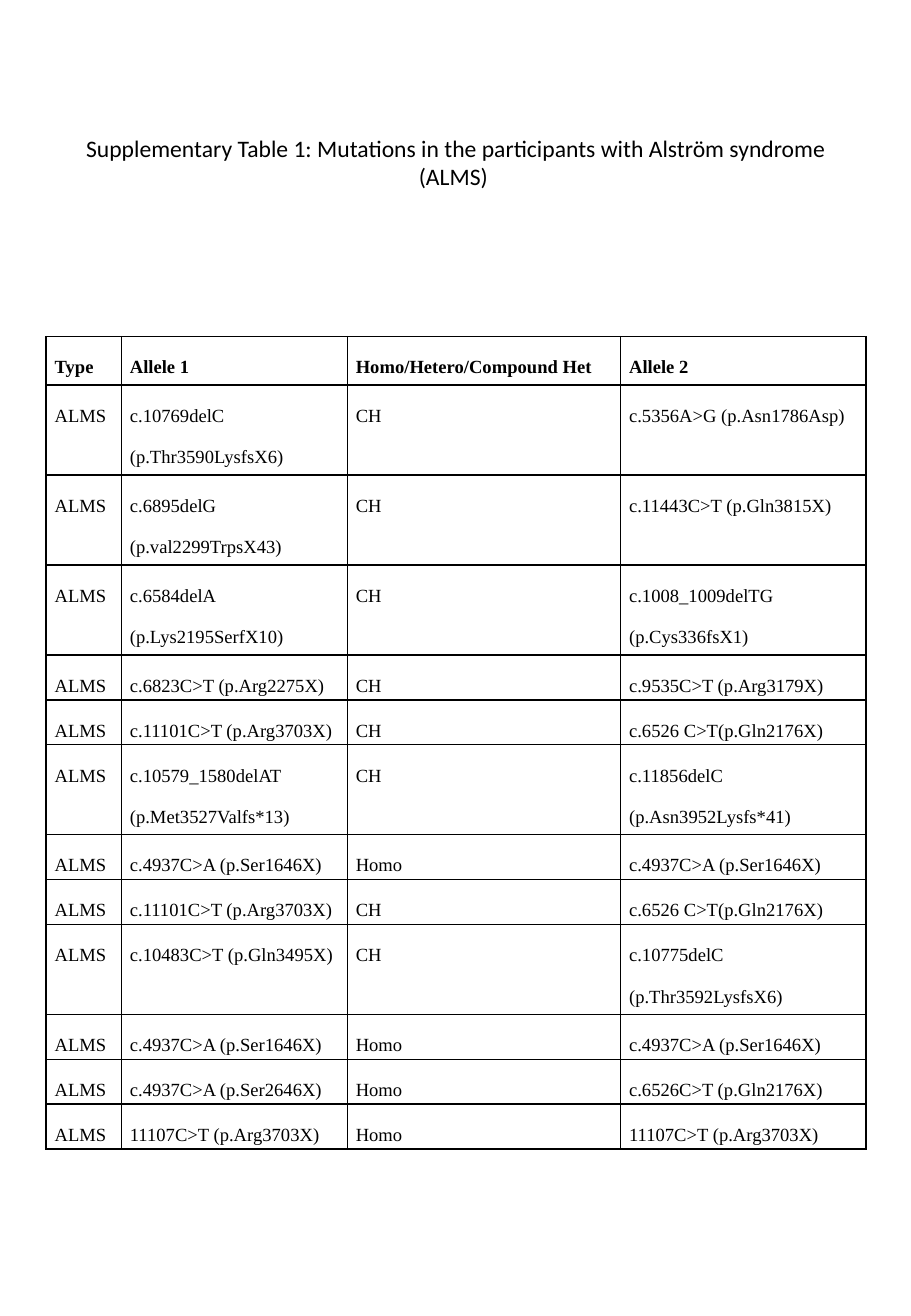
from typing import NamedTuple

from lxml.etree import SubElement
from pptx import Presentation
from pptx.dml.color import RGBColor
from pptx.enum.text import MSO_ANCHOR as Anchor, PP_ALIGN as Align
from pptx.oxml.ns import qn
from pptx.slide import Slide
from pptx.table import _Cell as Cell
from pptx.text.text import _Paragraph as Paragraph
from pptx.util import Inches, Pt

BLACK = "000000"
LEFT, WIDTH = 0.38, 6.75
COLUMN_WIDTHS = (0.62, 1.86, 2.25, 2.02)
HEADER_HEIGHT, LINE_HEIGHT = 0.4, 0.37
ONE_LINE_CHARS = 24


class Mutation(NamedTuple):
    allele_1: str
    zygosity: str
    allele_2: str

    @property
    def height(self) -> float:
        longest = max(len(self.allele_1), len(self.allele_2))
        return LINE_HEIGHT * (2 if longest > ONE_LINE_CHARS else 1)


HEADINGS = ("Type", "Allele 1", "Homo/Hetero/Compound Het", "Allele 2")
MUTATIONS = (
    Mutation("c.10769delC (p.Thr3590LysfsX6)", "CH", "c.5356A>G (p.Asn1786Asp)"),
    Mutation("c.6895delG (p.val2299TrpsX43)", "CH", "c.11443C>T (p.Gln3815X)"),
    Mutation("c.6584delA (p.Lys2195SerfX10)", "CH", "c.1008_1009delTG (p.Cys336fsX1)"),
    Mutation("c.6823C>T (p.Arg2275X)", "CH", "c.9535C>T (p.Arg3179X)"),
    Mutation("c.11101C>T (p.Arg3703X)", "CH", "c.6526 C>T(p.Gln2176X)"),
    Mutation("c.10579_1580delAT (p.Met3527Valfs*13)", "CH", "c.11856delC (p.Asn3952Lysfs*41)"),
    Mutation("c.4937C>A (p.Ser1646X)", "Homo", "c.4937C>A (p.Ser1646X)"),
    Mutation("c.11101C>T (p.Arg3703X)", "CH", "c.6526 C>T(p.Gln2176X)"),
    Mutation("c.10483C>T (p.Gln3495X)", "CH", "c.10775delC (p.Thr3592LysfsX6)"),
    Mutation("c.4937C>A (p.Ser1646X)", "Homo", "c.4937C>A (p.Ser1646X)"),
    Mutation("c.4937C>A (p.Ser2646X)", "Homo", "c.6526C>T (p.Gln2176X)"),
    Mutation("11107C>T (p.Arg3703X)", "Homo", "11107C>T (p.Arg3703X)"),
)


def set_font(paragraph: Paragraph, name: str, size: float, bold: bool = False) -> None:
    font = paragraph.font
    font.name, font.size, font.bold = name, Pt(size), bold
    font.color.rgb = RGBColor.from_string(BLACK)


def add_borders(cell: Cell) -> None:
    properties = cell._tc.get_or_add_tcPr()
    for side in ("a:lnL", "a:lnR", "a:lnT", "a:lnB"):
        line = SubElement(properties, qn(side), w=str(Pt(1)))
        fill = SubElement(line, qn("a:solidFill"))
        SubElement(fill, qn("a:srgbClr"), val=BLACK)


def fill_cell(cell: Cell, text: str, bold: bool) -> None:
    cell.text = text
    cell.margin_left = cell.margin_right = Inches(0.07)
    cell.margin_top = cell.margin_bottom = 0
    add_borders(cell)
    cell.fill.background()
    paragraph = cell.text_frame.paragraphs[0]
    paragraph.alignment = Align.JUSTIFY
    paragraph.line_spacing = 2.0
    set_font(paragraph, "Times New Roman", 11, bold)


def add_title(slide: Slide) -> None:
    title = slide.shapes.title
    title.left, title.top = Inches(LEFT), Inches(0.43)
    title.width, title.height = Inches(WIDTH), Inches(1.81)
    title.text = "Supplementary Table 1: Mutations in the participants with Alström syndrome (ALMS) "
    title.text_frame.vertical_anchor = Anchor.MIDDLE
    paragraph = title.text_frame.paragraphs[0]
    paragraph.alignment = Align.CENTER
    set_font(paragraph, "Calibri", 14)


def add_mutation_table(slide: Slide) -> None:
    rows = [HEADINGS] + [("ALMS", *mutation) for mutation in MUTATIONS]
    heights = [HEADER_HEIGHT] + [mutation.height for mutation in MUTATIONS]
    table = slide.shapes.add_table(
        len(rows), len(HEADINGS), Inches(LEFT), Inches(2.77), Inches(WIDTH), Inches(sum(heights))
    ).table
    table.first_row = table.horz_banding = False
    for column, width in zip(table.columns, COLUMN_WIDTHS):
        column.width = Inches(width)
    for index, (texts, height) in enumerate(zip(rows, heights)):
        row = table.rows[index]
        row.height = Inches(height)
        for cell, text in zip(row.cells, texts):
            fill_cell(cell, text, bold=index == 0)


def main() -> None:
    presentation = Presentation()
    presentation.slide_width = Inches(7.5)
    presentation.slide_height = Inches(10.83)
    slide = presentation.slides.add_slide(presentation.slide_layouts[5])
    add_title(slide)
    add_mutation_table(slide)
    presentation.save("out.pptx")


if __name__ == "__main__":
    main()
